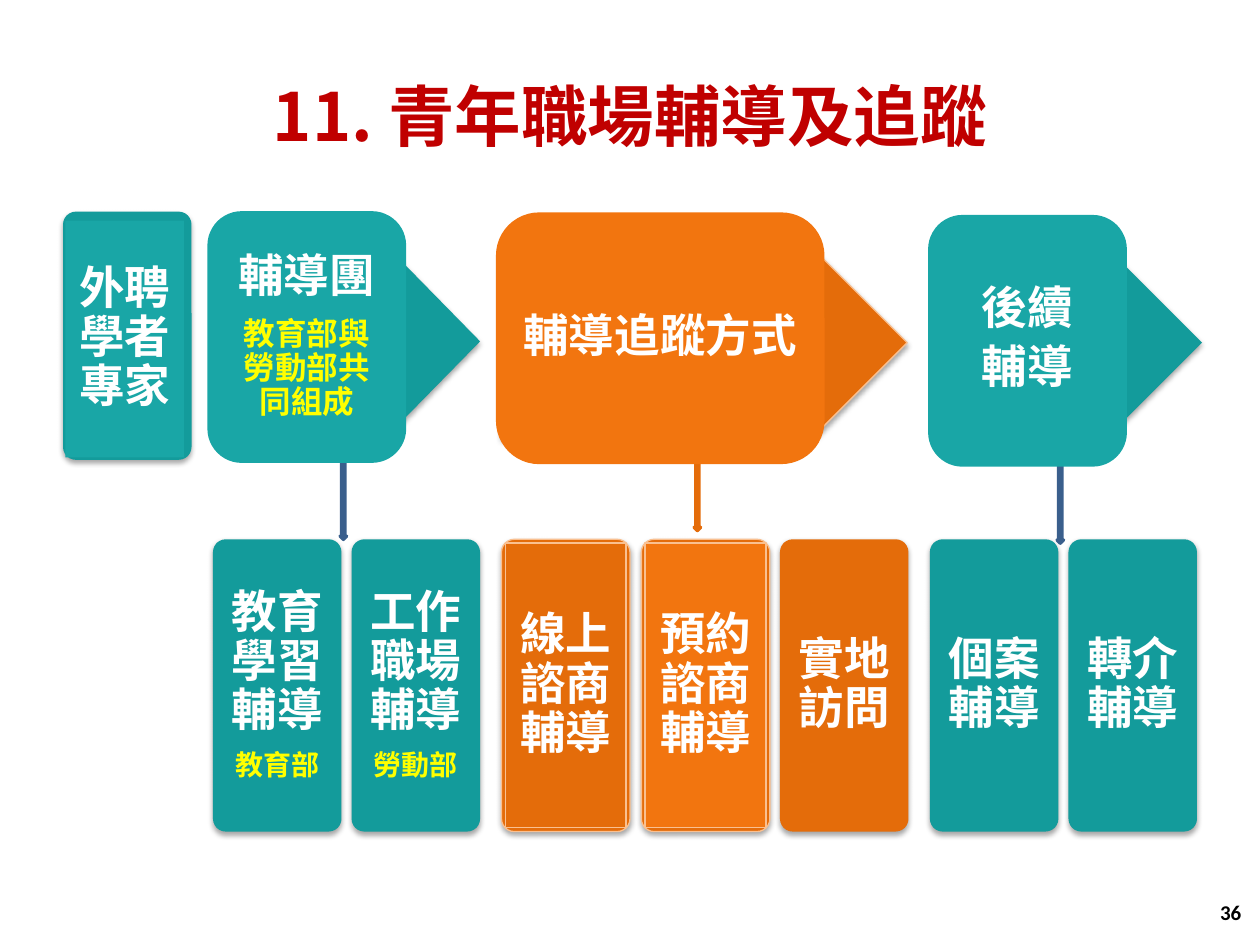
from dataclasses import dataclass

from lxml.etree import SubElement
from pptx import Presentation
from pptx.dml.color import RGBColor
from pptx.enum.shapes import MSO_SHAPE
from pptx.enum.text import MSO_ANCHOR, PP_ALIGN
from pptx.oxml import parse_xml
from pptx.oxml.ns import nsdecls, qn
from pptx.util import Inches, Pt


@dataclass(frozen=True)
class Theme:
    teal: str = "19A6A6"
    dark_teal: str = "139B9B"
    orange: str = "F2750F"
    dark_orange: str = "E46C0A"
    pale_orange: str = "FAC090"
    arrow_teal: str = "31859C"
    arrow_blue: str = "3A5F8C"
    red: str = "C00000"
    white: str = "FFFFFF"
    yellow: str = "FFFF00"
    black: str = "000000"
    cjk: str = "Noto Sans CJK SC"
    latin: str = "Calibri"
    title: int = 38
    label: int = 26
    team_note: int = 18
    card_note: int = 16
    number: int = 12


theme = Theme()


def write(frame, lines, font=theme.cjk, align=PP_ALIGN.CENTER, spacing=0.9):
    frame.word_wrap = True
    frame.vertical_anchor = MSO_ANCHOR.MIDDLE
    for index, (words, size, color) in enumerate(lines):
        paragraph = frame.add_paragraph() if index else frame.paragraphs[0]
        paragraph.alignment = align
        paragraph.line_spacing = spacing
        paragraph.space_after = Pt(9 if index < len(lines) - 1 else 0)
        run = paragraph.add_run()
        run.text = words
        run.font.size = Pt(size)
        run.font.bold = True
        run.font.name = font
        run.font.color.rgb = RGBColor.from_string(color)
        SubElement(run.font._element, qn("a:ea")).set("typeface", font)


def add_box(shapes, preset, box, fill, line=None, weight=0.75, adjust=None, shadow=False):
    shape = shapes.add_shape(preset, *(Inches(length) for length in box))
    shape.shadow.inherit = False
    shape.fill.solid()
    shape.fill.fore_color.rgb = RGBColor.from_string(fill)
    if line:
        shape.line.color.rgb = RGBColor.from_string(line)
        shape.line.width = Pt(weight)
    else:
        shape.line.fill.background()
    if adjust is not None:
        shape.adjustments[0] = adjust
    if shadow:
        shape._element.spPr.find(qn("a:effectLst")).append(parse_xml(
            f'<a:outerShdw {nsdecls("a")} blurRad="{Pt(3.1)}" dist="{Pt(1.8)}" '
            f'dir="5400000" rotWithShape="0"><a:srgbClr val="{theme.black}">'
            '<a:alpha val="35000"/></a:srgbClr></a:outerShdw>'))
    return shape


deck = Presentation()
deck.slide_width, deck.slide_height = Inches(10), Inches(7.5)
slide = deck.slides.add_slide(deck.slide_layouts[5])

title = slide.shapes.title
title.left, title.top, title.width, title.height = (
    Inches(0), Inches(0.62), Inches(10), Inches(0.59))
write(title.text_frame, [("11. 青年職場輔導及追蹤", theme.title, theme.red)], spacing=1)

page_number = slide.shapes.add_textbox(Inches(7.62), Inches(7.04), Inches(2.33), Inches(0.4))
write(page_number.text_frame, [("36", theme.number, theme.black)],
      theme.latin, PP_ALIGN.RIGHT, 1)

for box, fill, line, adjust in [
    ((1.69, 1.96, 2.12, 1.5), theme.dark_teal, None, 0.49),
    ((3.98, 1.97, 3.22, 1.5), theme.dark_orange, theme.pale_orange, 0.5),
    ((7.42, 1.97, 2.12, 1.5), theme.dark_teal, None, 0.5),
]:
    add_box(slide.shapes, MSO_SHAPE.PENTAGON, box, fill, line, adjust=adjust, shadow=True)

card_top, card_width, card_height, rim = 4.28, 1.02, 2.32, 0.03
cards = [((0.5, 1.68, card_width, 1.97), (0.52, 1.75, 0.94, 1.88),
          theme.dark_teal, theme.teal, None, "外聘學者專家", None)]
for left, outer, inner, line, label, note in [
    (1.69, theme.dark_teal, theme.dark_teal, None, "教育學習輔導", "教育部"),
    (2.79, theme.dark_teal, theme.dark_teal, None, "工作職場輔導", "勞動部"),
    (3.98, theme.dark_orange, theme.dark_orange, theme.pale_orange, "線上諮商輔導", None),
    (5.09, theme.dark_orange, theme.orange, theme.pale_orange, "預約諮商輔導", None),
    (6.19, theme.dark_orange, theme.dark_orange, None, "實地訪問", None),
    (7.38, theme.dark_teal, theme.dark_teal, None, "個案輔導", None),
    (8.48, theme.dark_teal, theme.dark_teal, None, "轉介輔導", None),
]:
    cards.append(((left, card_top, card_width, card_height),
                  (left + rim, card_top + rim, card_width - 2 * rim, card_height - 2 * rim),
                  outer, inner, line, label, note))

for frame_box, face_box, outer, inner, line, label, note in cards:
    card = slide.shapes.add_group_shape()
    add_box(card.shapes, MSO_SHAPE.ROUNDED_RECTANGLE, frame_box, outer, line,
            adjust=0.1, shadow=True)
    face = add_box(card.shapes, MSO_SHAPE.RECTANGLE, face_box, inner, line)
    text = face.text_frame
    text.margin_left = text.margin_right = Inches(0.09)
    text.margin_top = text.margin_bottom = Inches(0.11)
    lines = [(label, theme.label, theme.white)]
    if note:
        lines.append((note, theme.card_note, theme.yellow))
    write(text, lines)

for left, top, height, fill, line in [
    (2.7, 3.49, 0.79, theme.arrow_teal, theme.arrow_blue),
    (8.39, 3.52, 0.79, theme.arrow_teal, theme.arrow_blue),
    (5.51, 3.52, 0.69, theme.dark_orange, theme.dark_orange),
]:
    add_box(slide.shapes, MSO_SHAPE.DOWN_ARROW, (left, top, 0.05, height), fill, line, 2)

for left, top, width, fill, spacing, lines in [
    (1.66, 1.69, 1.55, theme.teal, 0.9,
     [("輔導團", theme.label, theme.white),
      ("教育部與勞動部共同組成", theme.team_note, theme.yellow)]),
    (7.38, 1.72, 1.55, theme.teal, 0.8,
     [("後續", theme.label, theme.white), ("輔導", theme.label, theme.white)]),
    (3.95, 1.7, 2.58, theme.orange, 0.9,
     [("輔導追蹤方式", theme.label, theme.white)]),
]:
    stage = add_box(slide.shapes, MSO_SHAPE.ROUNDED_RECTANGLE,
                    (left, top, width, 1.97), fill, fill, 2)
    write(stage.text_frame, lines, spacing=spacing)

deck.save("out.pptx")
